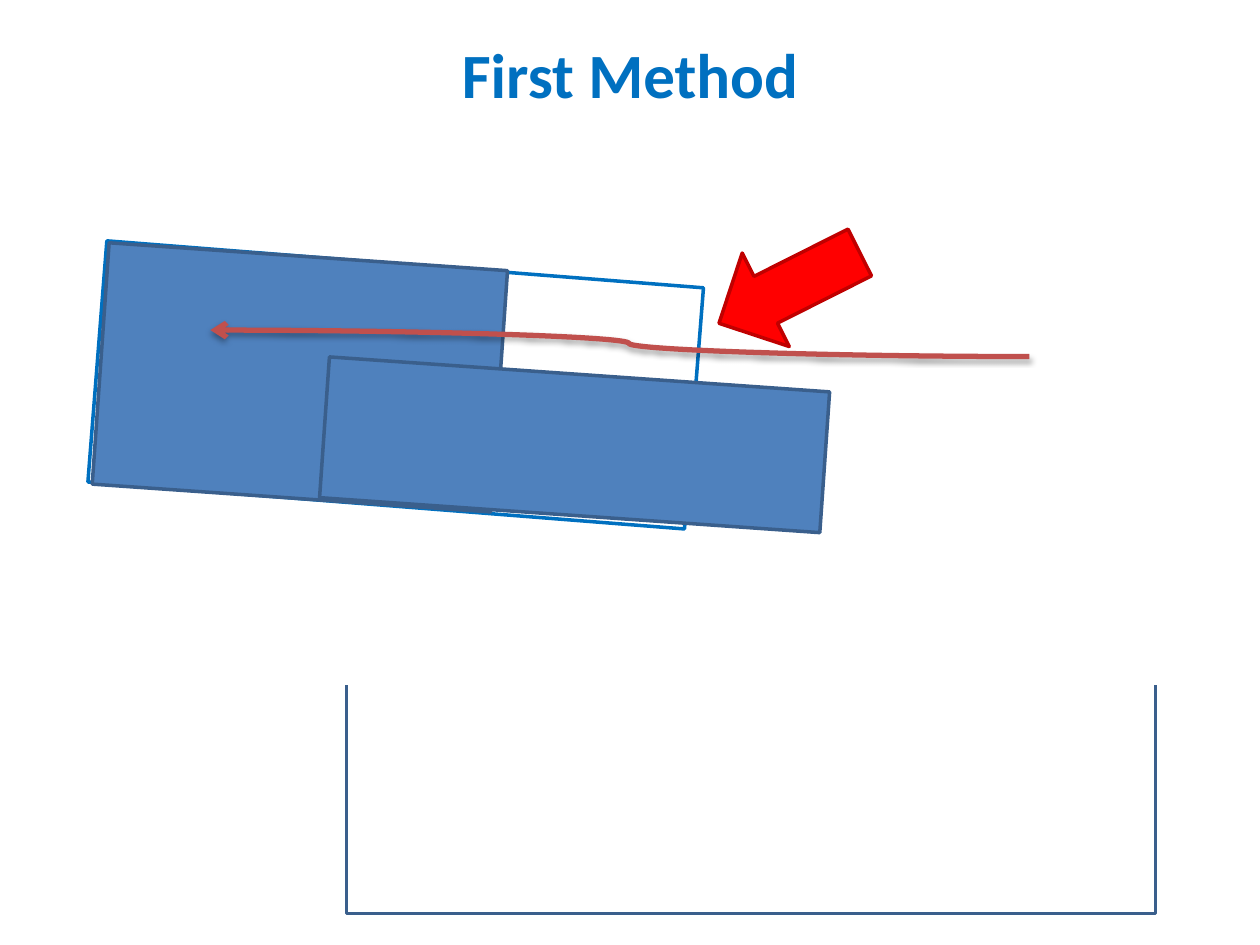
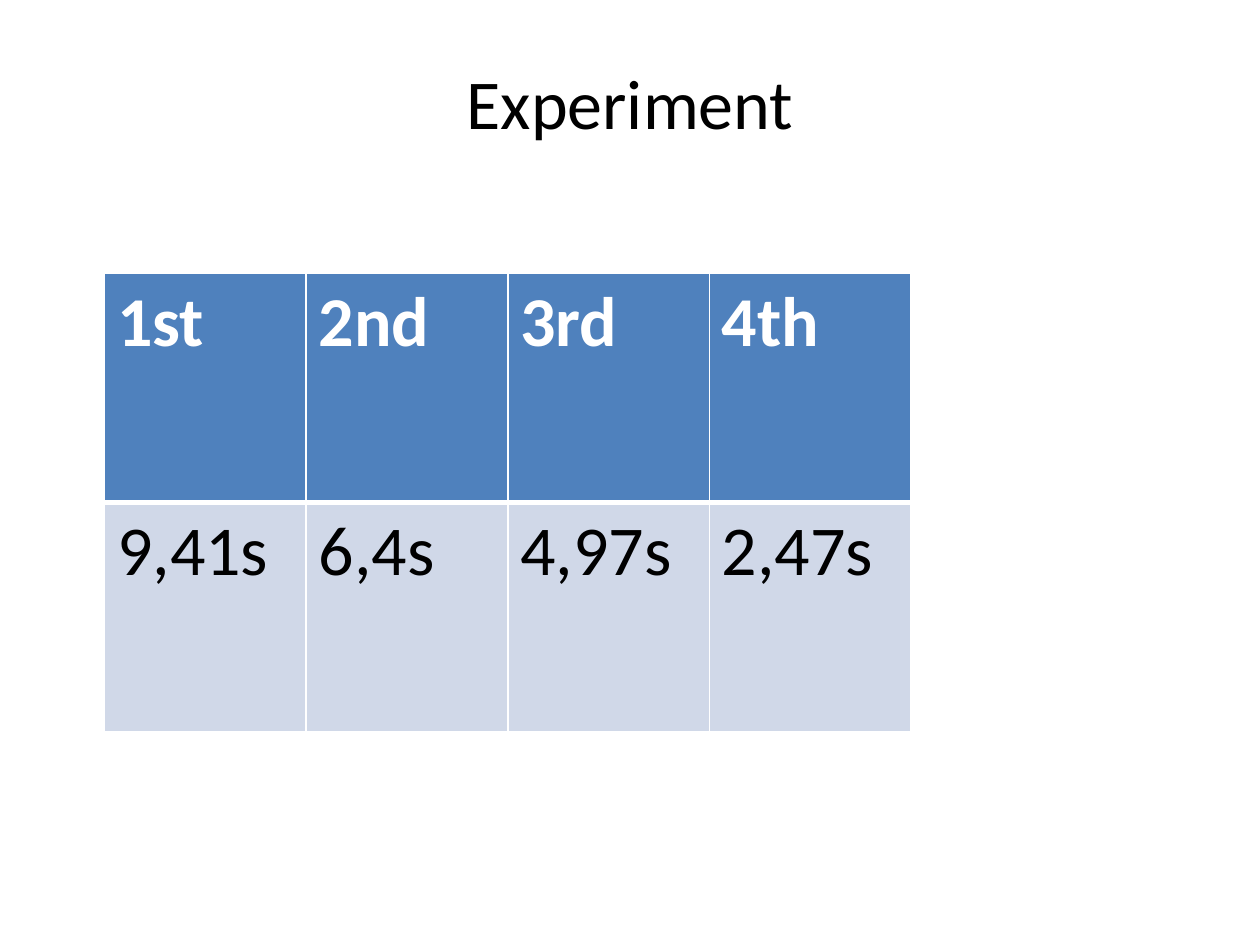
from lxml import etree
from pptx import Presentation
from pptx.dml.color import RGBColor
from pptx.enum.dml import MSO_FILL
from pptx.enum.shapes import MSO_CONNECTOR, MSO_SHAPE
from pptx.enum.text import MSO_ANCHOR, MSO_AUTO_SIZE, PP_ALIGN
from pptx.oxml import parse_xml
from pptx.oxml.ns import nsdecls, qn
from pptx.util import Inches, Pt

RECT = MSO_SHAPE.RECTANGLE
DOWN_ARROW = MSO_SHAPE.DOWN_ARROW
CURVE = MSO_CONNECTOR.CURVE
TITLE_ONLY = 5

FONT = "Calibri"
BLUE = RGBColor(0x4F, 0x81, 0xBD)
DARK_BLUE = RGBColor(0x3A, 0x5F, 0x8C)
BRIGHT_BLUE = RGBColor(0x00, 0x70, 0xC0)
PALE_BLUE = RGBColor(0xD0, 0xD8, 0xE8)
RED = RGBColor(0xFF, 0x00, 0x00)
DARK_RED = RGBColor(0xC0, 0x00, 0x00)
BRICK = RGBColor(0xC0, 0x50, 0x4D)
WHITE = RGBColor(0xFF, 0xFF, 0xFF)
BLACK = RGBColor(0x00, 0x00, 0x00)

# Title: text, (top, height), font format
METHOD_TITLE = ("First Method", (0.23, 0.71),
                {"size": Pt(36), "bold": True, "color": BRIGHT_BLUE})
EXPERIMENT_TITLE = ("Experiment", (0.42, 0.77),
                    {"size": Pt(40), "bold": False, "color": BLACK})

# Preset, (left, top, width, height), rotation, fill, line; back to front
METHOD_SHAPES = [
    (RECT, (2.18, 0.68, 1.92, 4.75), 94.5, None, BRIGHT_BLUE),
    (RECT, (1.42, 1.41, 1.92, 3.17), 94, BLUE, DARK_BLUE),
    (RECT, (2.75, 5.08, 6.42, 2.17), 0, None, DARK_BLUE),
    (RECT, (2.58, 4.75, 6.92, 0.67), 0, WHITE, WHITE),
    (RECT, (4, 1.54, 1.12, 3.98), 94, BLUE, DARK_BLUE),
    (DOWN_ARROW, (5.85, 1.66, 0.83, 1.25), 63.3, RED, DARK_RED),
]
PATH_START, PATH_END, PATH_BEND = (8.17, 2.83), (1.67, 2.62), 48900

TIMES = [
    ["1st", "2nd", "3rd", "4th", ""],
    ["9,41s", "6,4s", "4,97s", "2,47s", ""],
]
TABLE_BOX = (0.83, 2.17, 8, 3.64)
TABLE_COVER = (RECT, (7.25, 1.75, 1.58, 4.25), 0, WHITE, WHITE)
# Fill, font format, widths of left, right, top and bottom borders
ROW_STYLES = [
    (BLUE, {"size": Pt(40), "bold": True, "color": WHITE}, (1, 1, 1, 3)),
    (PALE_BLUE, {"size": Pt(40), "bold": False, "color": BLACK}, (1, 1, 3, 1)),
]


def format_font(font, formats):
    font.name = FONT
    for attribute, value in formats.items():
        if attribute == "color":
            font.color.rgb = value
        else:
            setattr(font, attribute, value)


def add_titled_slide(deck, title_content):
    text, (top, height), formats = title_content
    slide = deck.slides.add_slide(deck.slide_layouts[TITLE_ONLY])
    title = slide.shapes.title
    title.left, title.top = 0, Inches(top)
    title.width, title.height = deck.slide_width, Inches(height)
    frame = title.text_frame
    frame.text = text
    frame.vertical_anchor = MSO_ANCHOR.TOP
    frame.auto_size = MSO_AUTO_SIZE.SHAPE_TO_FIT_TEXT
    heading = frame.paragraphs[0]
    heading.alignment = PP_ALIGN.CENTER
    format_font(heading.runs[0].font, formats)
    return slide


def add_block(slide, preset, box, rotation, fill, line):
    block = slide.shapes.add_shape(preset, *map(Inches, box))
    block.rotation = rotation
    block.shadow.inherit = False
    if fill is None:
        block.fill.background()
    else:
        block.fill.solid()
        block.fill.fore_color.rgb = fill
    block.line.color.rgb = line
    block.line.width = Pt(2)


def add_path(slide):
    """Draw the curved arrow with its soft shadow."""
    path = slide.shapes.add_connector(CURVE, *map(Inches, PATH_START + PATH_END))
    path.line.color.rgb = BRICK
    path.line.width = Pt(3)
    properties = path.line._get_or_add_ln()
    etree.SubElement(properties, qn("a:tailEnd"), type="arrow")
    adjustments = path._element.spPr.find(qn("a:prstGeom")).find(qn("a:avLst"))
    etree.SubElement(adjustments, qn("a:gd"), name="adj1", fmla=f"val {PATH_BEND}")
    path._element.spPr.append(parse_xml(
        f'<a:effectLst {nsdecls("a")}>'
        f'<a:outerShdw blurRad="{Pt(3.1)}" dist="{Pt(1.8)}" dir="5400000" rotWithShape="0">'
        f'<a:srgbClr val="{BLACK}"><a:alpha val="35000"/></a:srgbClr>'
        '</a:outerShdw></a:effectLst>'))


def set_borders(cell, widths):
    properties = cell._tc.get_or_add_tcPr()
    for side, width in zip("LRTB", widths):
        properties.append(parse_xml(
            f'<a:ln{side} {nsdecls("a")} w="{Pt(width)}">'
            f'<a:solidFill><a:srgbClr val="{WHITE}"/></a:solidFill></a:ln{side}>'))


def add_times_table(slide):
    table = slide.shapes.add_table(
        len(TIMES), len(TIMES[0]), *map(Inches, TABLE_BOX)).table
    for row, (texts, (fill, formats, borders)) in enumerate(zip(TIMES, ROW_STYLES)):
        for column, text in enumerate(texts):
            cell = table.cell(row, column)
            cell.text = text
            format_font(cell.text_frame.paragraphs[0].font, formats)
            for run in cell.text_frame.paragraphs[0].runs:
                format_font(run.font, formats)
            set_borders(cell, borders)
            cell.fill.solid()
            cell.fill.fore_color.rgb = fill


def main():
    deck = Presentation()
    deck.slide_width, deck.slide_height = Inches(10), Inches(7.5)

    method = add_titled_slide(deck, METHOD_TITLE)
    for block in METHOD_SHAPES:
        add_block(method, *block)
    add_path(method)

    experiment = add_titled_slide(deck, EXPERIMENT_TITLE)
    add_times_table(experiment)
    add_block(experiment, *TABLE_COVER)

    deck.save("out.pptx")


if __name__ == "__main__":
    main()
